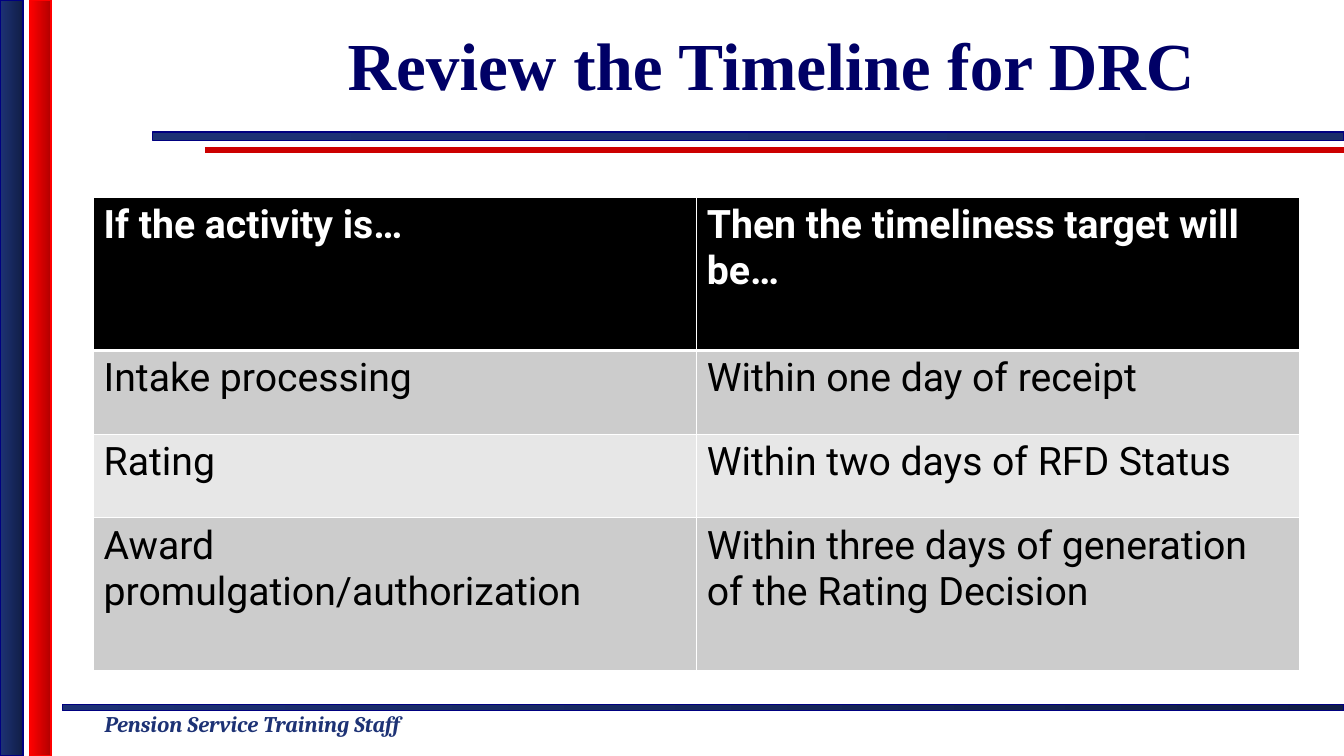
"""Build the slide with the timeliness targets for DRC activities."""
import pptx
import pptx.dml.color
import pptx.enum.shapes
import pptx.enum.text
import pptx.util
import lxml.etree
from pptx.util import Cm

TITLE = "Review the Timeline for DRC"
FOOTER = "Pension Service Training Staff"
ROWS = [
    ("If the activity is…", "Then the timeliness target will be…"),
    ("Intake processing", "Within one day of receipt"),
    ("Rating", "Within two days of RFD Status"),
    ("Award promulgation/authorization",
     "Within three days of generation of the Rating Decision"),
]
THEME = {
    "title": "000066", "navy": "1D3275", "deep navy": "111E46", "soft navy": "1A2D69",
    "navy edge": "000080", "red": "FF0000", "deep red": "B20000", "rule red": "CC0000",
    "header": "000000", "bands": ("CCCCCC", "E7E7E7"), "white": "FFFFFF", "black": "000000",
    "title size": 48, "table size": 28, "footer size": 16,
    "title font": "Times New Roman", "table font": "Roboto", "footer font": "Cambria",
}
SLIDE_WIDTH, SLIDE_HEIGHT = 33.87, 19.05
BARS = [
    (1.57, 17.75, SLIDE_WIDTH - 1.57, 0.16, "navy", "deep navy", "navy edge"),
    (3.85, 3.33, SLIDE_WIDTH - 3.85, 0.22, "navy", "soft navy", "navy edge"),
    (0, 0, 0.58, SLIDE_HEIGHT, "navy", "deep navy", "navy edge"),
    (0.75, 0, 0.54, SLIDE_HEIGHT, "red", "deep red", "red"),
]
RULE_START, RULE_TOP = 5.16, 3.78
TITLE_BOX = (5.94, 0, 27, 3.2)
FOOTER_BOX = (2.39, 17.78, 9.58, 0.94)
TABLE_LEFT, TABLE_TOP, COLUMN_WIDTH = 2.36, 4.98, 15.2
ROW_HEIGHTS = (3.85, 2.11, 2.11, 3.85)


def color(name):
    return pptx.dml.color.RGBColor.from_string(THEME.get(name, name))


def write_text(frame, text, font, size, ink, bold=False, italic=False, align=None):
    paragraph = frame.paragraphs[0]
    if align is not None:
        paragraph.alignment = align
    run = paragraph.add_run()
    run.text = text
    run.font.name = THEME[font]
    run.font.size = pptx.util.Pt(THEME[size])
    run.font.bold, run.font.italic = bold, italic
    run.font.color.rgb = color(ink)


def add_bar(slide, left, top, width, height, start, end, edge):
    shape = slide.shapes.add_shape(
        pptx.enum.shapes.MSO_SHAPE.RECTANGLE, Cm(left), Cm(top), Cm(width), Cm(height))
    shape.shadow.inherit = False
    shape.fill.gradient()
    shape.fill.gradient_angle = 0
    for stop, name in zip(shape.fill.gradient_stops, (start, end)):
        stop.color.rgb = color(name)
    shape.line.color.rgb = color(edge)
    shape.line.width = pptx.util.Pt(1)


def add_rule(slide):
    rule = slide.shapes.add_connector(
        pptx.enum.shapes.MSO_CONNECTOR.STRAIGHT,
        Cm(RULE_START), Cm(RULE_TOP), Cm(SLIDE_WIDTH), Cm(RULE_TOP))
    rule.line.color.rgb = color("rule red")
    rule.line.width = pptx.util.Pt(4)
    properties = rule._element.spPr
    lxml.etree.SubElement(properties, pptx.oxml.ns.qn("a:effectLst"))


def set_borders(cell, widths):
    properties = cell._tc.get_or_add_tcPr()
    for index, (side, points) in enumerate(widths.items()):
        border = properties.makeelement(
            pptx.oxml.ns.qn("a:ln" + side), {"w": str(pptx.util.Pt(points))})
        fill = lxml.etree.SubElement(border, pptx.oxml.ns.qn("a:solidFill"))
        lxml.etree.SubElement(fill, pptx.oxml.ns.qn("a:srgbClr"), val=THEME["white"])
        properties.insert(index, border)


def add_table(slide):
    table = slide.shapes.add_table(
        len(ROWS), 2, Cm(TABLE_LEFT), Cm(TABLE_TOP),
        Cm(2 * COLUMN_WIDTH), Cm(sum(ROW_HEIGHTS))).table
    for column in table.columns:
        column.width = Cm(COLUMN_WIDTH)
    for row, texts in enumerate(ROWS):
        table.rows[row].height = Cm(ROW_HEIGHTS[row])
        header = row == 0
        fill = THEME["header"] if header else THEME["bands"][(row - 1) % 2]
        for column, text in enumerate(texts):
            cell = table.cell(row, column)
            cell.fill.solid()
            cell.fill.fore_color.rgb = color(fill)
            set_borders(cell, {"L": 1, "R": 1, "T": 3 if row == 1 else 1, "B": 3 if header else 1})
            write_text(cell.text_frame, text, "table font", "table size",
                       "white" if header else "black", bold=header)


def add_text_box(slide, box, text, wrap, **text_format):
    frame = slide.shapes.add_textbox(*map(Cm, box)).text_frame
    frame.word_wrap = wrap
    frame.vertical_anchor = (pptx.enum.text.MSO_ANCHOR.MIDDLE if wrap
                             else pptx.enum.text.MSO_ANCHOR.TOP)
    write_text(frame, text, **text_format)


def main():
    presentation = pptx.Presentation()
    presentation.slide_width, presentation.slide_height = Cm(SLIDE_WIDTH), Cm(SLIDE_HEIGHT)
    slide = presentation.slides.add_slide(presentation.slide_layouts[6])
    add_rule(slide)
    for bar in BARS:
        add_bar(slide, *bar)
    add_text_box(slide, FOOTER_BOX, FOOTER, False, font="footer font", size="footer size",
                 ink="navy", bold=True, italic=True)
    add_text_box(slide, TITLE_BOX, TITLE, True, font="title font", size="title size",
                 ink="title", bold=True, align=pptx.enum.text.PP_ALIGN.CENTER)
    add_table(slide)
    presentation.save("out.pptx")


if __name__ == "__main__":
    main()
